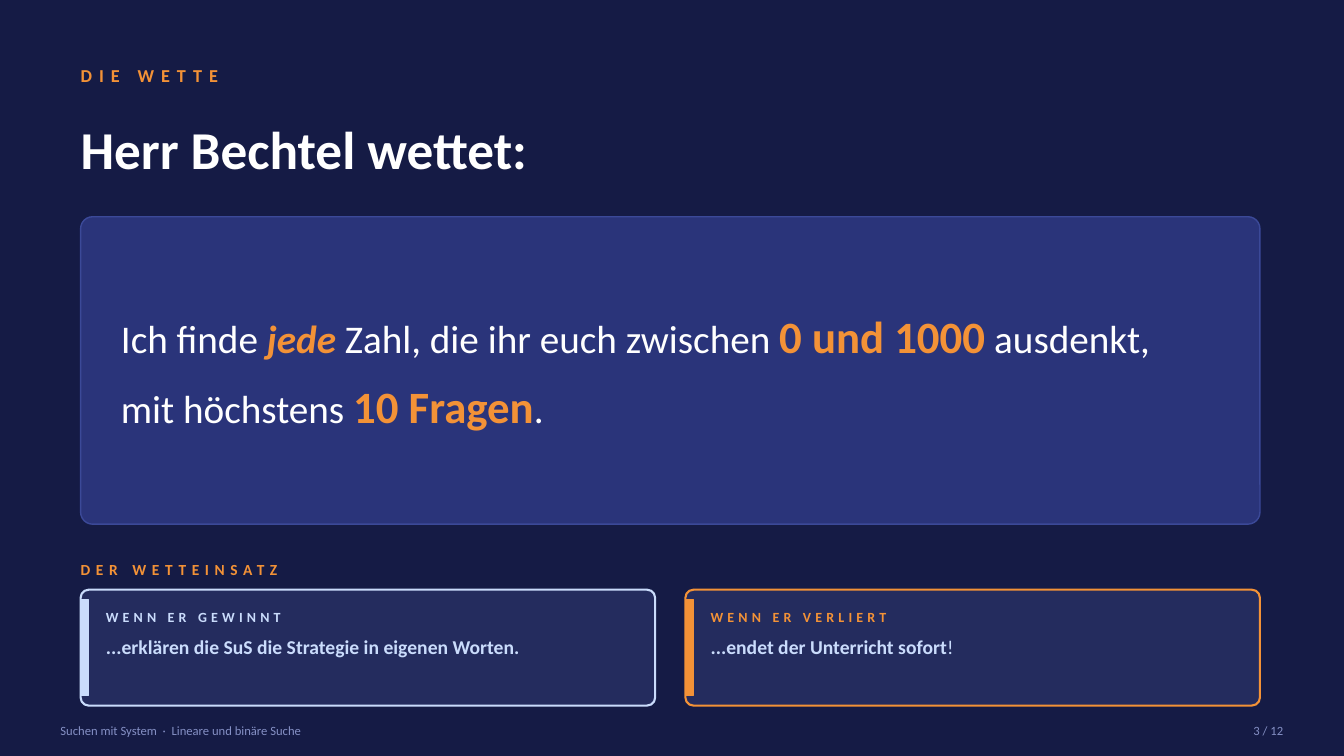
"""Build the slide on the bet about finding a number with ten questions."""
from dataclasses import dataclass

import pptx
import pptx.dml.color
import pptx.enum.shapes
import pptx.enum.text
import pptx.shapes.autoshape
import pptx.slide
import pptx.text.text
import pptx.util

Pt = pptx.util.Pt
Kind = pptx.enum.shapes.MSO_SHAPE
Align = pptx.enum.text.PP_ALIGN
Anchor = pptx.enum.text.MSO_ANCHOR

NIGHT, BLUE, EDGE, PANEL = "151B45", "2A347A", "3B4998", "242C5E"
ORANGE, ICE, WHITE, MUTED = "F39237", "CADCFC", "FFFFFF", "8590C5"
LEFT, WIDTH = 57.6, 842.4
CARD, GAP = 410.4, 21.6


@dataclass(frozen=True)
class Box:
    x: float
    y: float
    w: float
    h: float

    def span(self) -> tuple[int, int, int, int]:
        return Pt(self.x), Pt(self.y), Pt(self.w), Pt(self.h)


@dataclass(frozen=True)
class Run:
    text: str
    size: float
    color: str
    bold: bool = False
    slant: bool = False
    track: float = 0


@dataclass(frozen=True)
class Label:
    box: Box
    lines: list[list[Run]]
    align: Align = Align.LEFT
    anchor: Anchor = Anchor.MIDDLE
    before: float = 0


@dataclass(frozen=True)
class Stake:
    head: str
    color: str
    body: list[Run]


def paint(color: str) -> pptx.dml.color.RGBColor:
    return pptx.dml.color.RGBColor.from_string(color)


def write(frame: pptx.text.text.TextFrame, label: Label) -> None:
    frame.word_wrap = True
    frame.auto_size = pptx.enum.text.MSO_AUTO_SIZE.NONE
    frame.vertical_anchor = label.anchor
    frame.margin_left = frame.margin_right = 0
    frame.margin_top = frame.margin_bottom = 0
    for index, line in enumerate(label.lines):
        para = frame.add_paragraph() if index else frame.paragraphs[0]
        para.alignment = label.align
        para.space_before = Pt(label.before if index else 0)
        for part in line:
            run = para.add_run()
            run.text = part.text
            font = run.font
            font.name, font.size = "Calibri", Pt(part.size)
            font.bold, font.italic = part.bold, part.slant
            font.color.rgb = paint(part.color)
            if part.track:
                run._r.get_or_add_rPr().set("spc", str(round(part.track * 100)))


def add_text(slide: pptx.slide.Slide, label: Label) -> None:
    write(slide.shapes.add_textbox(*label.box.span()).text_frame, label)


def add_title(slide: pptx.slide.Slide, label: Label) -> None:
    title = slide.shapes.title
    title.left, title.top, title.width, title.height = label.box.span()
    write(title.text_frame, label)


def add_panel(slide: pptx.slide.Slide, box: Box, fill: str, line: str,
              width: float = 1, curve: float = 0) -> pptx.shapes.autoshape.Shape:
    kind = Kind.ROUNDED_RECTANGLE if curve else Kind.RECTANGLE
    shape = slide.shapes.add_shape(kind, *box.span())
    if curve:
        shape.adjustments[0] = curve
    shape.shadow.inherit = False
    shape.fill.solid()
    shape.fill.fore_color.rgb = paint(fill)
    shape.line.color.rgb = paint(line)
    shape.line.width = Pt(width)
    return shape


def add_stake(slide: pptx.slide.Slide, x: float, stake: Stake) -> None:
    add_panel(slide, Box(x, 421.2, CARD, 82.8), PANEL, stake.color, 1.5, 0.07)
    add_panel(slide, Box(x, 428.4, 5.76, 68.4), stake.color, stake.color)
    head = Run(stake.head, 10, stake.color, bold=True, track=3)
    add_text(slide, Label(Box(x + 18, 429.84, 381.6, 21.6), [[head]]))
    add_text(slide, Label(Box(x + 18, 453.6, 381.6, 43.2), [stake.body],
                          anchor=Anchor.TOP))


TITLE = Label(Box(LEFT, 72, 864, 68.4),
              [[Run("Herr Bechtel wettet:", 38, WHITE, bold=True)]])
BET = Label(Box(86.4, 172.8, 792, 183.6), [
    [Run("Ich finde ", 28, WHITE),
     Run("jede", 28, ORANGE, bold=True, slant=True),
     Run(" Zahl, die ihr euch zwischen ", 28, WHITE),
     Run("0 und 1000", 32, ORANGE, bold=True),
     Run(" ausdenkt,", 28, WHITE)],
    [Run("mit höchstens ", 28, WHITE),
     Run("10 Fragen", 32, ORANGE, bold=True),
     Run(".", 28, WHITE)],
], before=12)
LABELS = [
    Label(Box(LEFT, 39.6, 864, 28.8),
          [[Run("DIE WETTE", 13, ORANGE, bold=True, track=5)]]),
    BET,
    Label(Box(LEFT, 396, 864, 21.6),
          [[Run("DER WETTEINSATZ", 11, ORANGE, bold=True, track=4)]]),
    Label(Box(43.2, 511.2, 576, 21.6),
          [[Run("Suchen mit System  ·  Lineare und binäre Suche", 9, MUTED)]]),
    Label(Box(859, 511.2, 57.6, 21.6), [[Run("3 / 12", 9, MUTED)]], Align.RIGHT),
]
STAKES = [
    Stake("WENN ER GEWINNT", ICE,
          [Run("...erklären die SuS die Strategie in eigenen Worten.", 14, ICE, bold=True)]),
    Stake("WENN ER VERLIERT", ORANGE,
          [Run("...endet der Unterricht sofort", 14, ICE, bold=True),
           Run("!", 14, ICE)]),
]


def main() -> None:
    deck = pptx.Presentation()
    deck.slide_width, deck.slide_height = Pt(960), Pt(540)
    slide = deck.slides.add_slide(deck.slide_layouts[5])
    slide.background.fill.solid()
    slide.background.fill.fore_color.rgb = paint(NIGHT)
    add_title(slide, TITLE)
    add_panel(slide, Box(LEFT, 154.8, WIDTH, 219.6), BLUE, EDGE, curve=0.039)
    for label in LABELS:
        add_text(slide, label)
    for index, stake in enumerate(STAKES):
        add_stake(slide, LEFT + index * (CARD + GAP), stake)
    deck.save("out.pptx")


if __name__ == "__main__":
    main()
